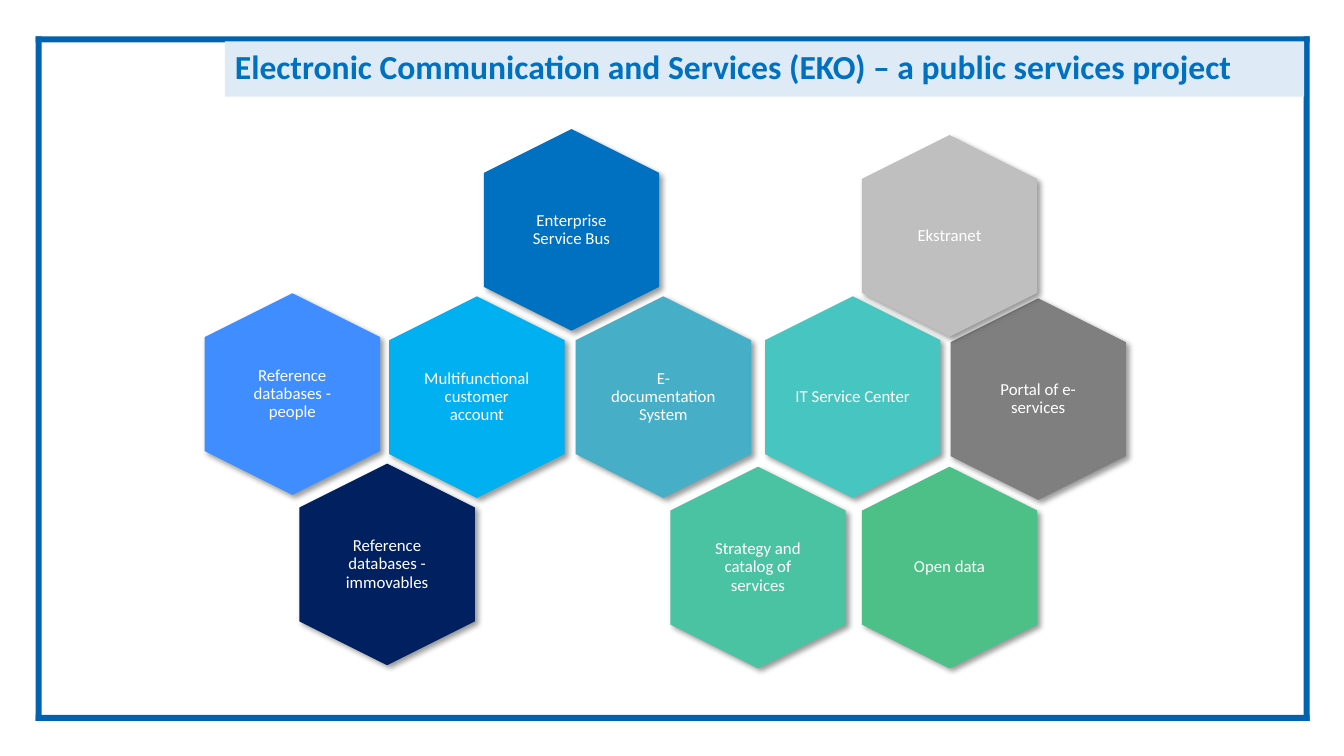
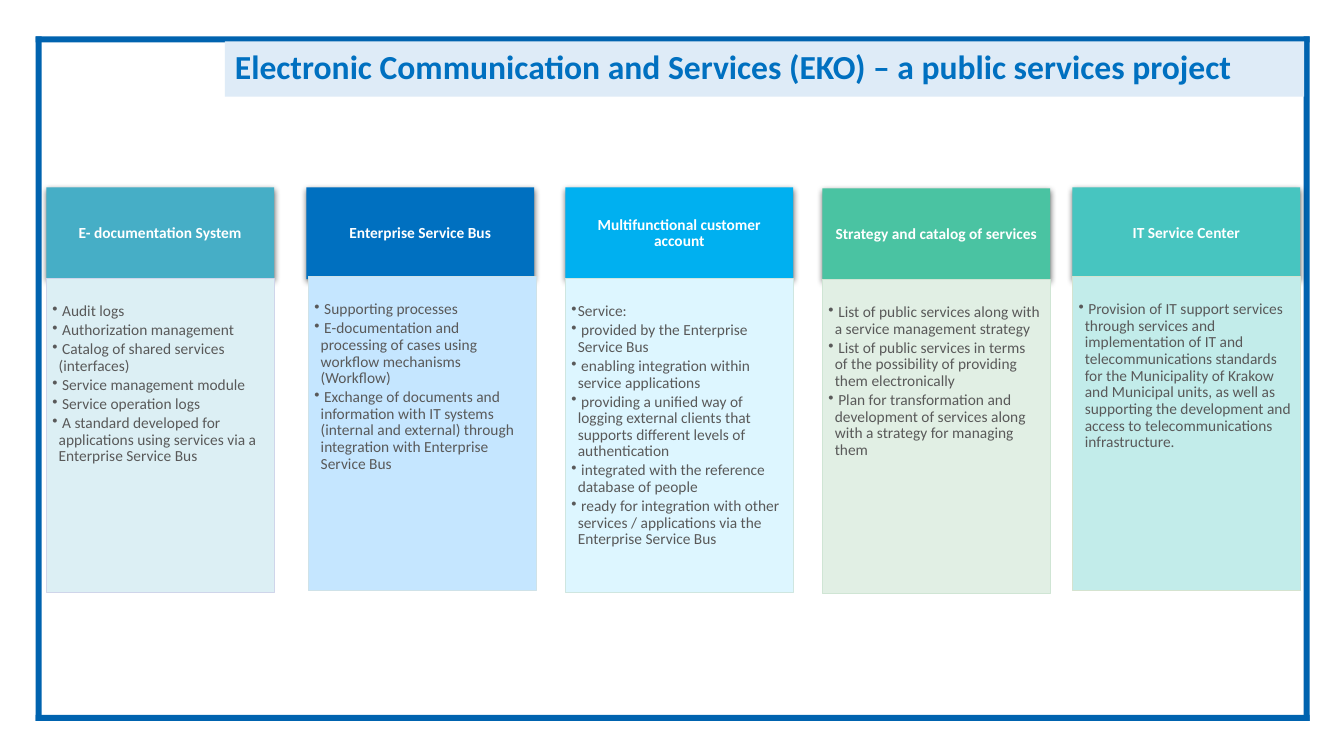
from lxml import etree
from pptx import Presentation
from pptx.dml.color import RGBColor
from pptx.enum import shapes as es, text as et
from pptx.oxml.ns import qn
from pptx.util import Pt

INK = {
    "frame": "0063AF", "band": "DEEBF7", "title": "0070C0",
    "white": "FFFFFF", "body": "595959", "shade": "000000",
    "bus": "0070C0", "account": "00B0F0", "docs": "46AEC6",
    "center": "47C5C0", "plan": "4AC3A2", "open": "4CC086",
    "people": "3F8DFF", "portal": "7F7F7F", "land": "002060",
    "extra": "BFBFBF",
}
TITLE = "Electronic Communication and Services (EKO) – a public services project"
LEFT, MID = et.PP_ALIGN.LEFT, et.PP_ALIGN.CENTER
RECT, HEX = es.MSO_SHAPE.RECTANGLE, es.MSO_SHAPE.HEXAGON

# Hexagons: label, colour, centre x, centre y, side inset of the text
CELLS = [
    ("Enterprise Service Bus", "bus", 408.2, 164.2, 3.6),
    ("Multifunctional customer account", "account", 340.6, 283.7, 0),
    ("E- documentation System", "docs", 473.8, 283.7, 3.6),
    ("IT Service Center", "center", 609.1, 283.7, 0),
    ("Strategy and catalog of services", "plan", 541.4, 405.4, 3.6),
    ("Open data", "open", 678.2, 405.4, 0),
    ("Reference databases - people", "people", 208.8, 281.5, 3.6),
    ("Portal of e-services", "portal", 741.6, 285.1, 0),
    ("Reference databases - immovables", "land", 276.5, 403.2, 3.6),
    ("Ekstranet", "extra", 678.2, 168.5, 0),
]

# Columns: head, colour, head (x, y), body (x, y), body fill, body line, items
COLS = [
    ("E- documentation System", "docs", (33.1, 133.9), (33.1, 198.7),
     "DCEFF4", "CFD5EA", [
         " Audit logs",
         " Authorization management",
         " Catalog of shared services (interfaces)",
         " Service management module",
         " Service operation logs",
         " A standard developed for applications using services via a "
         "Enterprise Service Bus"]),
    ("Enterprise Service Bus", "bus", (218.9, 133.9), (220.3, 197.3),
     "C5E6FF", "CFE2E8", [
         " Supporting processes",
         " E-documentation and processing of cases using workflow "
         "mechanisms (Workflow)",
         " Exchange of documents and information with IT systems (internal "
         "and external) through integration with Enterprise Service Bus"]),
    ("Multifunctional customer account", "account", (403.9, 133.9),
     (403.9, 198.7), "DDF6FF", "CFE6E0", [
         "Service:",
         " provided by the Enterprise Service Bus",
         " enabling integration within service applications",
         " providing a unified way of logging external clients that supports "
         "different levels of authentication",
         " integrated with the reference database of people",
         " ready for integration with other services / applications via the "
         "Enterprise Service Bus"]),
    ("Strategy and catalog of services", "plan", (587.5, 134.6),
     (587.5, 199.4), "E1EFE4", "CFE5D4", [
         " List of public services along with a service management strategy",
         " List of public services in terms of the possibility of providing "
         "them electronically",
         " Plan for transformation and development of services along with a "
         "strategy for managing them"]),
    ("IT Service Center", "center", (766.1, 133.9), (766.1, 197.3),
     "C2ECEA", "D5E3CF", [
         " Provision of IT support services through services and "
         "implementation of IT and telecommunications standards for the "
         "Municipality of Krakow and Municipal units, as well as supporting "
         "the development and access to telecommunications infrastructure."]),
]


def rgb(tone):
    return RGBColor.from_string(INK.get(tone, tone))


def write(shape, lines, size=12, tone="white", bold=False, align=MID,
          anchor=et.MSO_ANCHOR.MIDDLE, pad=(7.2, 3.6, 7.2, 3.6),
          after=0, hang=0):
    """Fill a shape with paragraphs; hang is the indent of bulleted ones."""
    frame = shape.text_frame
    frame.word_wrap = True
    frame.auto_size = et.MSO_AUTO_SIZE.NONE
    frame.vertical_anchor = anchor
    (frame.margin_left, frame.margin_top,
     frame.margin_right, frame.margin_bottom) = map(Pt, pad)
    for i, line in enumerate(lines):
        para = frame.add_paragraph() if i else frame.paragraphs[0]
        para.alignment = align
        para.line_spacing = 0.9
        para.space_after = Pt(after)
        if hang:
            props = para._p.get_or_add_pPr()
            props.set("marL", str(Pt(hang)))
            props.set("indent", str(-Pt(hang)))
            etree.SubElement(props, qn("a:buChar")).set("char", "•")
        run = para.add_run()
        run.text = line
        font = run.font
        font.name, font.size, font.bold = "Calibri", Pt(size), bold
        font.color.rgb = rgb(tone)


def block(slide, kind, box, fill, line=None):
    shape = slide.shapes.add_shape(kind, *map(Pt, box))
    shape.shadow.inherit = False
    shape.fill.solid()
    shape.fill.fore_color.rgb = rgb(fill)
    if line:
        shape.line.color.rgb = rgb(line)
        shape.line.width = Pt(0.5)
    else:
        shape.line.fill.background()
    return shape


def shade(shape, blur, dist, angle, alpha):
    """Give a shape an outer shadow."""
    effect = shape._element.spPr.find(qn("a:effectLst"))
    outer = etree.SubElement(
        effect, qn("a:outerShdw"), blurRad=str(Pt(blur)), dist=str(Pt(dist)),
        dir=str(angle * 60000), algn="ctr", rotWithShape="0")
    color = etree.SubElement(outer, qn("a:srgbClr"), val=INK["shade"])
    etree.SubElement(color, qn("a:alpha"), val=str(alpha * 1000))


def border(slide, layout):
    """Draw the frame bars and hand them to the layout."""
    x, y, w, h, bar = 25.5, 26, 910, 489, 4.3
    for box in [(x, y, w, bar), (x, y + h - bar, w, bar),
                (x, y, bar, h), (x + w - bar, y, bar, h)]:
        layout.shapes._spTree.append(
            block(slide, RECT, box, "frame")._element)


def page(deck, layout):
    slide = deck.slides.add_slide(layout)
    title = slide.shapes.title
    title.left, title.top, title.width, title.height = map(
        Pt, (160.6, 29.5, 771, 39.6))
    title.fill.solid()
    title.fill.fore_color.rgb = rgb("band")
    write(title, [TITLE], size=24, tone="title", bold=True, align=LEFT)
    return slide


def cell(slide, label, tone, x, y, inset):
    """Upright hexagon with its label, both centred on x, y."""
    w, h = 144, 125.3
    shape = block(slide, HEX, (x - w / 2, y - h / 2, w, h), tone)
    shape.rotation = 90
    shape.adjustments[0] = 0.25
    shade(shape, 4, 3, 45, 40)
    w, h = 85.7, 98.6
    label_box = slide.shapes.add_textbox(
        *map(Pt, (x - w / 2, y - h / 2, w, h)))
    write(label_box, [label], pad=(inset,) * 4)


def column(slide, head, tone, top, low, fill, line, items):
    """Head block with a bulleted block below it."""
    w = 162.7
    shape = block(slide, RECT, (*top, w, 65.5), tone)
    shade(shape, 4.5, 1.5, 90, 63)
    write(shape, [head], size=11, bold=True, pad=(6.5, 3.6, 6.5, 3.6))
    shape = block(slide, RECT, (*low, w, 224.6), fill, line)
    write(shape, items, size=11, tone="body", align=LEFT,
          anchor=et.MSO_ANCHOR.TOP, pad=(4.3, 18, 6.5, 7.2),
          after=1.7, hang=4.5)


def main():
    deck = Presentation()
    deck.slide_width, deck.slide_height = Pt(960), Pt(540)
    layout = deck.slide_layouts[5]

    # Parts of the project
    slide = page(deck, layout)
    border(slide, layout)
    for item in CELLS:
        cell(slide, *item)

    # What each part offers
    slide = page(deck, layout)
    for item in COLS:
        column(slide, *item)

    deck.save("out.pptx")


if __name__ == "__main__":
    main()
